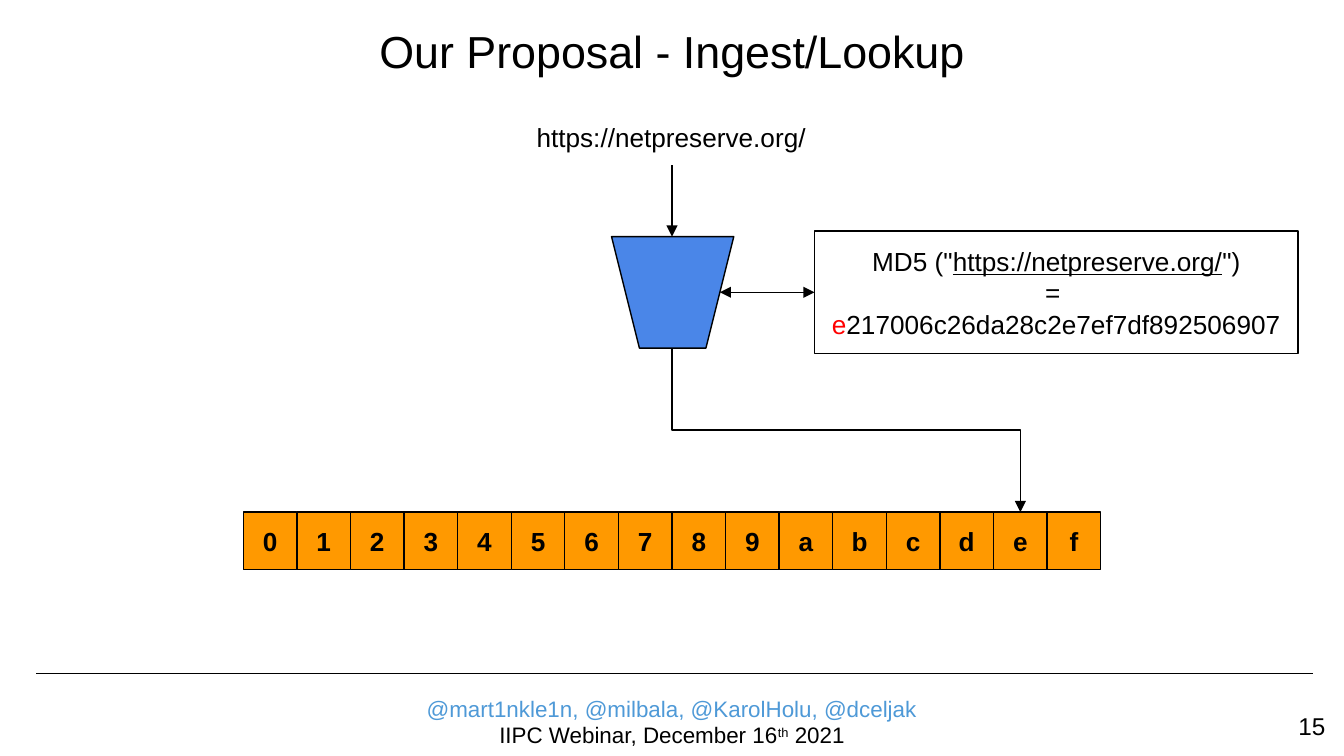
from lxml.etree import SubElement
from pptx import Presentation
from pptx.dml.color import RGBColor
from pptx.enum.shapes import MSO_CONNECTOR, MSO_SHAPE
from pptx.enum.text import MSO_ANCHOR, MSO_AUTO_SIZE, PP_ALIGN
from pptx.oxml.ns import qn
from pptx.util import Inches, Pt

BLACK = RGBColor(0x00, 0x00, 0x00)
WHITE = RGBColor(0xFF, 0xFF, 0xFF)
RED = RGBColor(0xFF, 0x00, 0x00)
ORANGE = RGBColor(0xFF, 0x99, 0x00)
BLUE = RGBColor(0x4A, 0x86, 0xE8)
HANDLE_BLUE = RGBColor(0x4E, 0x99, 0xD7)

FONT = "Arial"
WIDTH = 10
HEIGHT = WIDTH * 9 / 16
CENTER = WIDTH / 2
URL = "https://netpreserve.org/"
DIGITS = "0123456789abcdef"


def set_text(shape, paragraphs, size, align=PP_ALIGN.CENTER,
             anchor=MSO_ANCHOR.TOP, inset=0.1):
    """Fill a shape with paragraphs, each a list of (text, font settings)."""
    tf = shape.text_frame
    tf.word_wrap = True
    tf.auto_size = MSO_AUTO_SIZE.NONE
    tf.vertical_anchor = anchor
    tf.margin_left = tf.margin_right = Inches(0.1)
    tf.margin_top = tf.margin_bottom = Inches(inset)
    for i, runs in enumerate(paragraphs):
        p = tf.add_paragraph() if i else tf.paragraphs[0]
        p.alignment = align
        for text, style in runs:
            r = p.add_run()
            r.text = text
            r.font.name = FONT
            r.font.size = Pt(size)
            r.font.color.rgb = style.get("color", BLACK)
            r.font.bold = style.get("bold", False)
            r.font.underline = style.get("underline", False)
            if "baseline" in style:
                r.font._element.set("baseline", style["baseline"])


def add_textbox(s, box, paragraphs, size, **options):
    sp = s.shapes.add_textbox(*map(Inches, box))
    set_text(sp, paragraphs, size, **options)


def add_outlined(parent, kind, box, fill):
    sp = parent.shapes.add_shape(kind, *map(Inches, box))
    sp.shadow.inherit = False
    sp.fill.solid()
    sp.fill.fore_color.rgb = fill
    sp.line.color.rgb = BLACK
    sp.line.width = Pt(0.75)
    return sp


def add_line(s, start, end, kind=MSO_CONNECTOR.STRAIGHT, arrows=()):
    """Draw a connector; arrows names its ends, headEnd before tailEnd."""
    line = s.shapes.add_connector(kind, *map(Inches, (*start, *end)))
    line.line.color.rgb = BLACK
    line.line.width = Pt(0.75)
    ln = line.line._get_or_add_ln()
    for arrow in arrows:
        SubElement(ln, qn(f"a:{arrow}"), type="triangle", w="med", len="med")
    SubElement(line._element.spPr, qn("a:effectLst"))
    return line


def add_drop_elbow(s, start, end):
    """Draw a down-across-down arrow: an elbow turned by three quarters."""
    (x1, y1), (x2, y2) = start, end
    cx, cy = (x1 + x2) / 2, (y1 + y2) / 2
    half_w, half_h = (y2 - y1) / 2, (x2 - x1) / 2
    line = add_line(s, (cx + half_w, cy - half_h), (cx - half_w, cy + half_h),
                    MSO_CONNECTOR.ELBOW, ["tailEnd"])
    line._element.spPr.find(qn("a:xfrm")).set("rot", str(270 * 60000))


def add_title(s, box):
    title = s.shapes.title
    title.left, title.top, title.width, title.height = map(Inches, box)
    set_text(title, [[("Our Proposal - Ingest/Lookup", {})]], 24,
             anchor=MSO_ANCHOR.MIDDLE, inset=0.03)


def add_footer(s, box):
    left, top, width, height = box
    add_line(s, (left, top), (left + width, top))
    handles = "@mart1nkle1n, @milbala, @KarolHolu, @dceljak"
    add_textbox(s, (CENTER - 2.75, top + 0.11, 5.5, 0.5), [
        [(handles, {"color": HANDLE_BLUE})],
        [("IIPC Webinar, December 16", {}), ("th", {"baseline": "30000"}),
         (" 2021", {})],
    ], 12, inset=0.05)
    add_textbox(s, (9.36, top + height - 0.43, 0.6, 0.43), [[("15", {})]], 13,
                align=PP_ALIGN.RIGHT)


def add_buckets(s, box):
    """Draw one equal cell for each hexadecimal digit."""
    left, top, width, height = box
    cell = width / len(DIGITS)
    group = s.shapes.add_group_shape()
    for i, digit in enumerate(DIGITS):
        sp = add_outlined(group, MSO_SHAPE.RECTANGLE,
                          (left + i * cell, top, cell, height), ORANGE)
        set_text(sp, [[(digit, {"bold": True})]], 14, anchor=MSO_ANCHOR.MIDDLE)


def add_hash_function(s, box):
    left, top, width, height = box
    funnel = add_outlined(s, MSO_SHAPE.TRAPEZOID, box, BLUE)
    funnel.rotation = 180
    add_textbox(s, (CENTER - 1.32, 0.8, 2.63, 0.44), [[(URL, {})]], 14)
    add_line(s, (CENTER, 1.23), (CENTER, top), arrows=["tailEnd"])
    middle = top + height / 2
    add_line(s, (left + width - height / 8, middle), (6.06, middle),
             arrows=["headEnd", "tailEnd"])


def add_digest(s, box):
    sp = add_outlined(s, MSO_SHAPE.RECTANGLE, box, WHITE)
    set_text(sp, [
        [('MD5 ("', {}), (URL, {"underline": True}), ('")', {})],
        [("= ", {})],
        [("e", {"color": RED}), ("217006c26da28c2e7ef7df892506907", {})],
    ], 14, anchor=MSO_ANCHOR.MIDDLE)


def main():
    prs = Presentation()
    prs.slide_width, prs.slide_height = Inches(WIDTH), Inches(HEIGHT)
    s = prs.slides.add_slide(prs.slide_layouts[5])

    buckets = (1.81, 3.81, 6.38, 0.43)
    funnel = (CENTER - 0.45, 1.76, 0.91, 0.83)
    footer_top = 5.01
    add_footer(s, (0.27, footer_top, 9.5, HEIGHT - footer_top))
    add_buckets(s, buckets)
    add_hash_function(s, funnel)
    target = buckets[0] + (DIGITS.index("e") + 0.5) * buckets[2] / len(DIGITS)
    add_drop_elbow(s, (CENTER, funnel[1] + funnel[3]), (target, buckets[1]))
    add_digest(s, (6.06, 1.72, 3.6, 0.91))
    add_title(s, (0.71, -0.01, 8.58, 0.77))
    prs.save("out.pptx")


if __name__ == "__main__":
    main()
